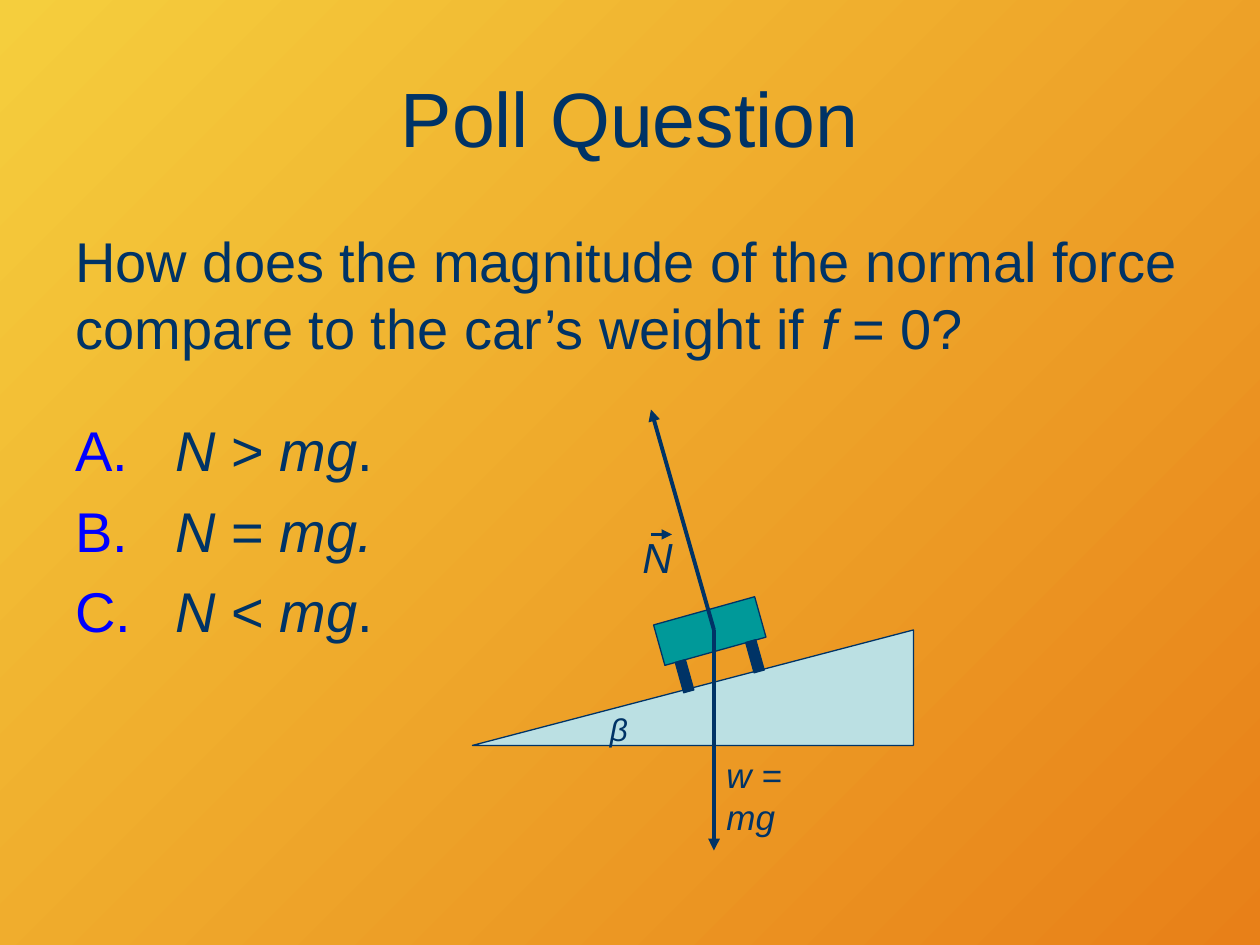
from typing import NamedTuple

from lxml import etree
from pptx import Presentation, util as u
from pptx.dml.color import RGBColor
from pptx.enum import shapes, text
from pptx.oxml import ns

NAVY = RGBColor(0x00, 0x33, 0x66)
BLUE = RGBColor(0x00, 0x00, 0xFF)
TEAL = RGBColor(0x00, 0x99, 0x99)
PALE_BLUE = RGBColor(0xBB, 0xE0, 0xE3)
YELLOW = RGBColor(0xF5, 0xCE, 0x3D)
ORANGE = RGBColor(0xE8, 0x80, 0x18)

CELL = u.Inches(1) / 12  # the slide is a grid of 120 columns by 90 rows
COLUMNS, ROWS = 120, 90
SLOPE = -15.6  # tilt of the car, in degrees
ORIGIN = (68, 60)  # where both forces act
FONT = "Arial"


class Box(NamedTuple):
    column: float
    row: float
    columns: float
    rows: float


class Label(NamedTuple):
    wording: str
    box: Box
    size: int


class Part(NamedTuple):
    kind: shapes.MSO_SHAPE
    box: Box
    fill: RGBColor
    rotation: float = 0


class Arrow(NamedTuple):
    start: tuple[float, float]
    end: tuple[float, float]
    width: float


TITLE = Box(6, 3.6, 108, 15)
QUESTION = Box(6, 21, 108, 16)
CHOICES = Box(6, 39, 31, 28)

# Wording between underscores is italic.
QUESTION_TEXT = ("How does the magnitude of the normal force compare to "
                 "the car’s weight if _f_ = 0?")
CHOICE_TEXTS = [" _N_ > _mg_.", " _N_ = _mg._", " _N_ < _mg_."]

RAMP = Part(shapes.MSO_SHAPE.RIGHT_TRIANGLE, Box(45, 60, 42, 11), PALE_BLUE)
CAR = [
    Part(shapes.MSO_SHAPE.RECTANGLE, Box(62.6, 58.1, 10, 4), TEAL, SLOPE),
    Part(shapes.MSO_SHAPE.RECTANGLE, Box(64.7, 62.9, 1, 3), NAVY, SLOPE),
    Part(shapes.MSO_SHAPE.RECTANGLE, Box(71.4, 61, 1, 3), NAVY, SLOPE),
]
ANGLE = Label("_β_", Box(56.9, 67, 4, 4.8), 18)
FORCES = [
    (Arrow(ORIGIN, (68, 81), 2.25), Label("_w = mg_", Box(68, 71.2, 13.2, 5.2), 20)),
    (Arrow(ORIGIN, (62, 39), 2.25), Label("_N_", Box(60, 50, 5.3, 6), 24)),
]
VECTOR_MARK = Arrow((62, 50.9), (64, 50.9), 1.5)


def grid(*cells: float) -> list[int]:
    return [round(cell * CELL) for cell in cells]


def apply(target, values: dict) -> None:
    for name, value in values.items():
        setattr(target, name, value)


def add_text(slide, box: Box, paragraphs: list[str], size: int,
             frame_format: dict | None = None,
             paragraph_format: dict | None = None) -> list:
    """Add a text box and return its paragraphs."""
    frame = slide.shapes.add_textbox(*grid(*box)).text_frame
    apply(frame, {"word_wrap": True, **(frame_format or {})})
    for index, wording in enumerate(paragraphs):
        paragraph = frame.add_paragraph() if index else frame.paragraphs[0]
        apply(paragraph, paragraph_format or {})
        for position, piece in enumerate(wording.split("_")):
            if piece:
                run = paragraph.add_run()
                run.text = piece
                apply(run.font, {"name": FONT, "size": u.Pt(size),
                                 "italic": position % 2 == 1})
                run.font.color.rgb = NAVY
    return list(frame.paragraphs)


def add_label(slide, label: Label) -> None:
    add_text(slide, label.box, [label.wording], label.size, {"word_wrap": False})


def number_with_letters(paragraph) -> None:
    properties = paragraph._p.get_or_add_pPr()
    indent = u.Inches(0.67)
    properties.set("marL", str(indent))
    properties.set("indent", str(-indent))
    color = etree.SubElement(properties, ns.qn("a:buClr"))
    etree.SubElement(color, ns.qn("a:srgbClr"), val=str(BLUE))
    etree.SubElement(properties, ns.qn("a:buFont"), typeface=FONT)
    etree.SubElement(properties, ns.qn("a:buAutoNum"), type="alphaUcPeriod")


def add_part(slide, part: Part):
    shape = slide.shapes.add_shape(part.kind, *grid(*part.box))
    shape.rotation = part.rotation
    shape.shadow.inherit = False
    shape.fill.solid()
    shape.fill.fore_color.rgb = part.fill
    shape.line.color.rgb = NAVY
    shape.line.width = u.Pt(0.75)
    return shape


def add_arrow(slide, arrow: Arrow) -> None:
    connector = slide.shapes.add_connector(
        shapes.MSO_CONNECTOR.STRAIGHT, *grid(*arrow.start, *arrow.end))
    connector.line.color.rgb = NAVY
    connector.line.width = u.Pt(arrow.width)
    etree.SubElement(connector.line._get_or_add_ln(), ns.qn("a:tailEnd"),
                     type="triangle")
    etree.SubElement(connector._element.spPr, ns.qn("a:effectLst"))


def paint_background(slide) -> None:
    fill = slide.background.fill
    fill.gradient()
    fill.gradient_angle = 315
    for stop, color, position in zip(fill.gradient_stops, (YELLOW, ORANGE), (0, 1)):
        stop.color.rgb = color
        stop.position = position


def main() -> None:
    presentation = Presentation()
    apply(presentation, dict(zip(("slide_width", "slide_height"),
                                 grid(COLUMNS, ROWS))))
    slide = presentation.slides.add_slide(presentation.slide_layouts[6])
    paint_background(slide)

    spacing = {"space_before": u.Pt(7.5)}
    add_text(slide, TITLE, ["Poll Question"], 44,
             {"vertical_anchor": text.MSO_ANCHOR.MIDDLE},
             {"alignment": text.PP_ALIGN.CENTER})
    add_text(slide, QUESTION, [QUESTION_TEXT], 32, paragraph_format=spacing)

    ramp = add_part(slide, RAMP)
    ramp._element.spPr.xfrm.set("flipH", "1")
    add_label(slide, ANGLE)
    for part in CAR:
        add_part(slide, part)
    for arrow, label in FORCES:
        add_arrow(slide, arrow)
        add_label(slide, label)
    add_arrow(slide, VECTOR_MARK)

    for paragraph in add_text(slide, CHOICES, CHOICE_TEXTS, 32,
                              paragraph_format=spacing):
        number_with_letters(paragraph)
    presentation.save("out.pptx")


if __name__ == "__main__":
    main()
